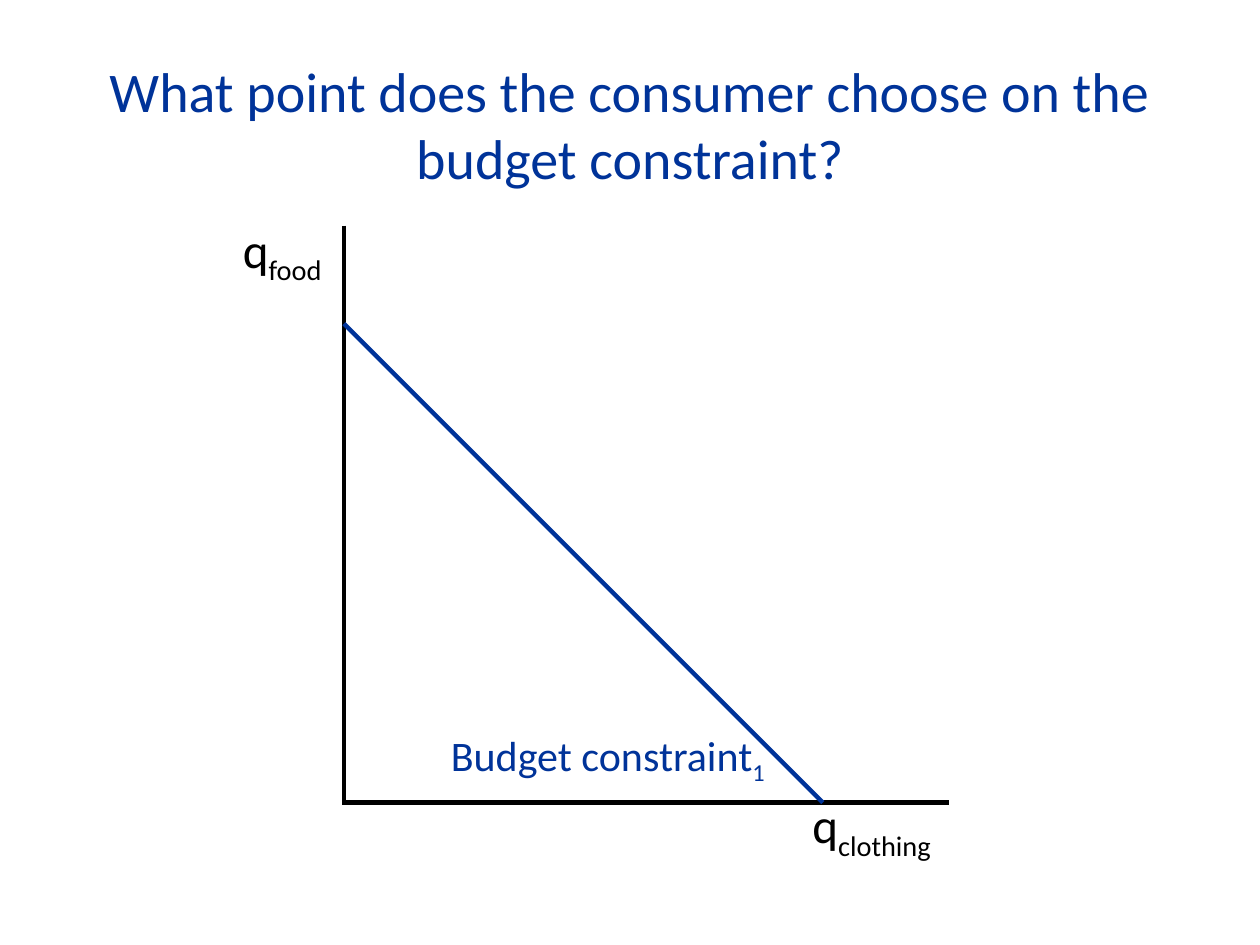
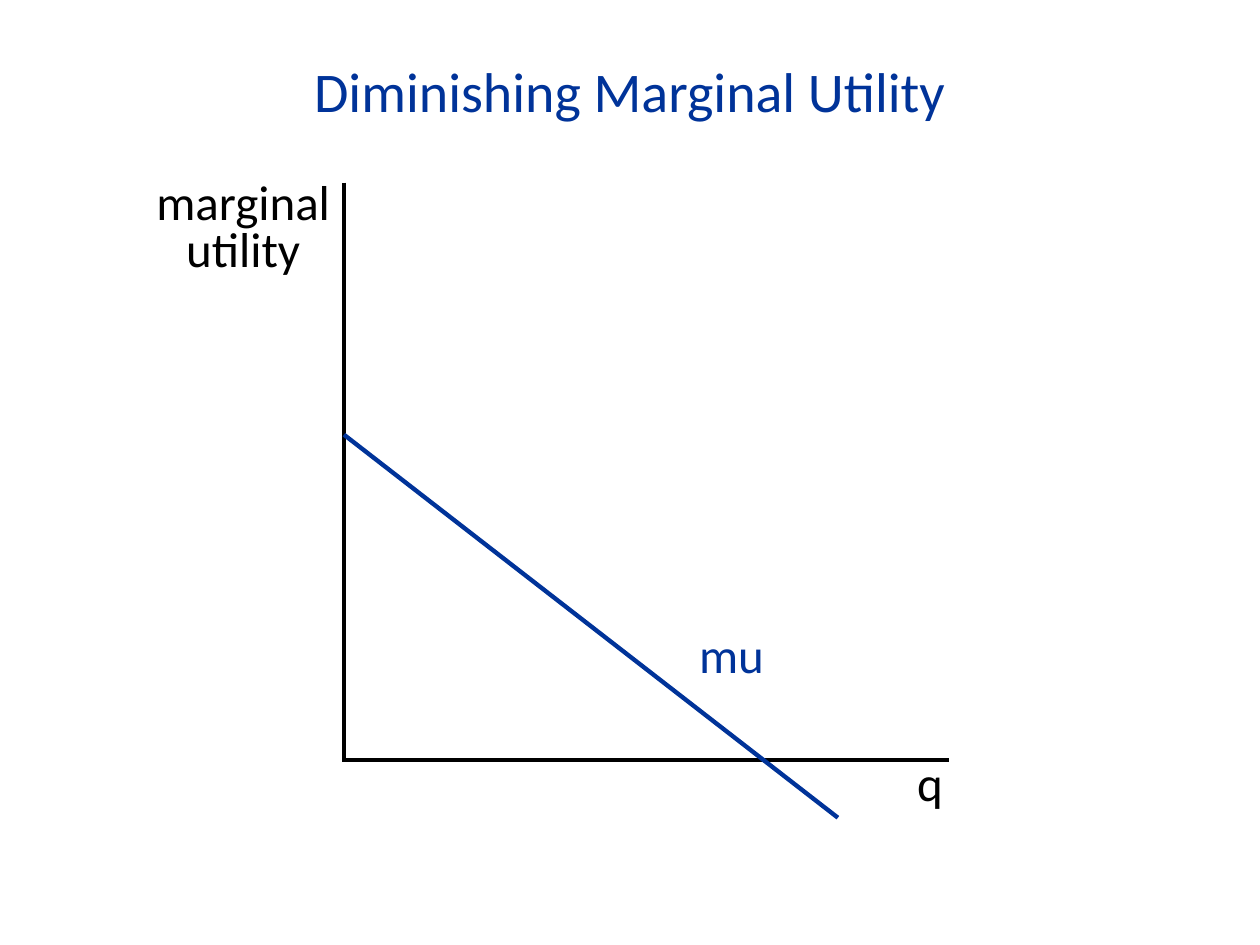
"""Builds two economics slides, each a title over a line graph."""
from pptx import Presentation
from pptx.dml.color import RGBColor
from pptx.enum.shapes import MSO_CONNECTOR, MSO_SHAPE
from pptx.enum.text import MSO_ANCHOR, PP_ALIGN
from pptx.oxml.ns import qn
from pptx.util import Inches, Pt
from lxml.etree import SubElement

FONT, BLUE, BLACK, WHITE = "Calibri", "003399", "000000", "FFFFFF"
WIDTH, HEIGHT = 10, 7.5
TITLE_BOX = (0.07 * WIDTH, 0.06 * HEIGHT, 0.86 * WIDTH, 0.88 * HEIGHT)
ORIGIN_X, AXIS_W, AXIS_H, OVERLAP = 2.73, 4.8, 4.58, 0.02

SLIDES = [
    {"title": "What point does the consumer choose on the budget constraint?",
     "origin_y": 6.37,
     "x_label": {"lines": [("q", "clothing")], "left": 6.35, "width": 1.4},
     "y_label": {"lines": [("q", "food")], "left": 1.83, "width": 1.17},
     "curve": {"start": 3.8, "run": 3.8, "drop": 3.8},
     "curve_label": {"lines": [("Budget constraint", "1")], "left": 3.48,
                     "top": 5.74, "width": 3.17, "size": 24}},
    {"title": "Diminishing Marginal Utility",
     "origin_y": 6.03,
     "x_label": {"lines": [("q", "")], "left": 7.18, "width": 0.5},
     "y_label": {"lines": [("marginal", ""), ("utility", "")], "left": 1.07,
                 "width": 1.72, "align": PP_ALIGN.CENTER},
     "curve": {"start": 2.58, "run": 3.92, "drop": 3.04},
     "curve_label": {"lines": [("mu", "")], "left": 5.45, "top": 4.91,
                     "width": 0.92}},
]


def rgb(color):
    return RGBColor.from_string(color)


def style_run(r, size, color):
    r.font.name, r.font.size, r.font.color.rgb = FONT, Pt(size), rgb(color)


def add_title(s, text):
    sp = s.shapes.add_shape(MSO_SHAPE.RECTANGLE, *map(Inches, TITLE_BOX))
    sp.shadow.inherit = False
    sp.fill.solid()
    sp.fill.fore_color.rgb = rgb(WHITE)
    sp.line.fill.background()
    tf = sp.text_frame
    tf.word_wrap, tf.vertical_anchor = True, MSO_ANCHOR.TOP
    tf.margin_top = tf.margin_bottom = 0
    p = tf.paragraphs[0]
    p.text, p.alignment, p.space_before = text, PP_ALIGN.CENTER, Pt(6)
    style_run(p.runs[0], 32, BLUE)


def add_line(s, x1, y1, x2, y2, color=BLACK):
    line = s.shapes.add_connector(MSO_CONNECTOR.STRAIGHT,
                                  *map(Inches, (x1, y1, x2, y2)))
    line.line.color.rgb, line.line.width = rgb(color), Pt(2.5)
    SubElement(line._element.spPr, qn("a:effectLst"))


def add_label(s, lines, left, top, width, size=28, color=BLACK,
              align=PP_ALIGN.LEFT, spacing=1.0):
    height = 0.1 + len(lines) * size / 60 * spacing
    tf = s.shapes.add_textbox(*map(Inches, (left, top, width, height))).text_frame
    tf.word_wrap = True
    for i, (base, subscript) in enumerate(lines):
        p = tf.add_paragraph() if i else tf.paragraphs[0]
        p.alignment, p.line_spacing = align, spacing
        for text, offset in ((base, None), (subscript, "-25000")):
            if text:
                r = p.add_run()
                r.text = text
                style_run(r, size, color)
                if offset:
                    r.font._element.set("baseline", offset)


def add_graph(s, origin_y, x_label, y_label, curve, curve_label):
    top = origin_y - AXIS_H
    add_line(s, ORIGIN_X, top, ORIGIN_X, origin_y + OVERLAP)
    add_line(s, ORIGIN_X, origin_y, ORIGIN_X + AXIS_W, origin_y)
    add_label(s, top=origin_y - 0.11, **x_label)
    add_label(s, top=top - 0.05, spacing=0.8, **y_label)
    start_y = origin_y - curve["start"]
    add_line(s, ORIGIN_X, start_y, ORIGIN_X + curve["run"],
             start_y + curve["drop"], BLUE)
    add_label(s, color=BLUE, **curve_label)


def main():
    prs = Presentation()
    prs.slide_width, prs.slide_height = Inches(WIDTH), Inches(HEIGHT)
    for content in SLIDES:
        s = prs.slides.add_slide(prs.slide_layouts[6])
        graph = dict(content)
        add_title(s, graph.pop("title"))
        add_graph(s, **graph)
    prs.save("out.pptx")


if __name__ == "__main__":
    main()
